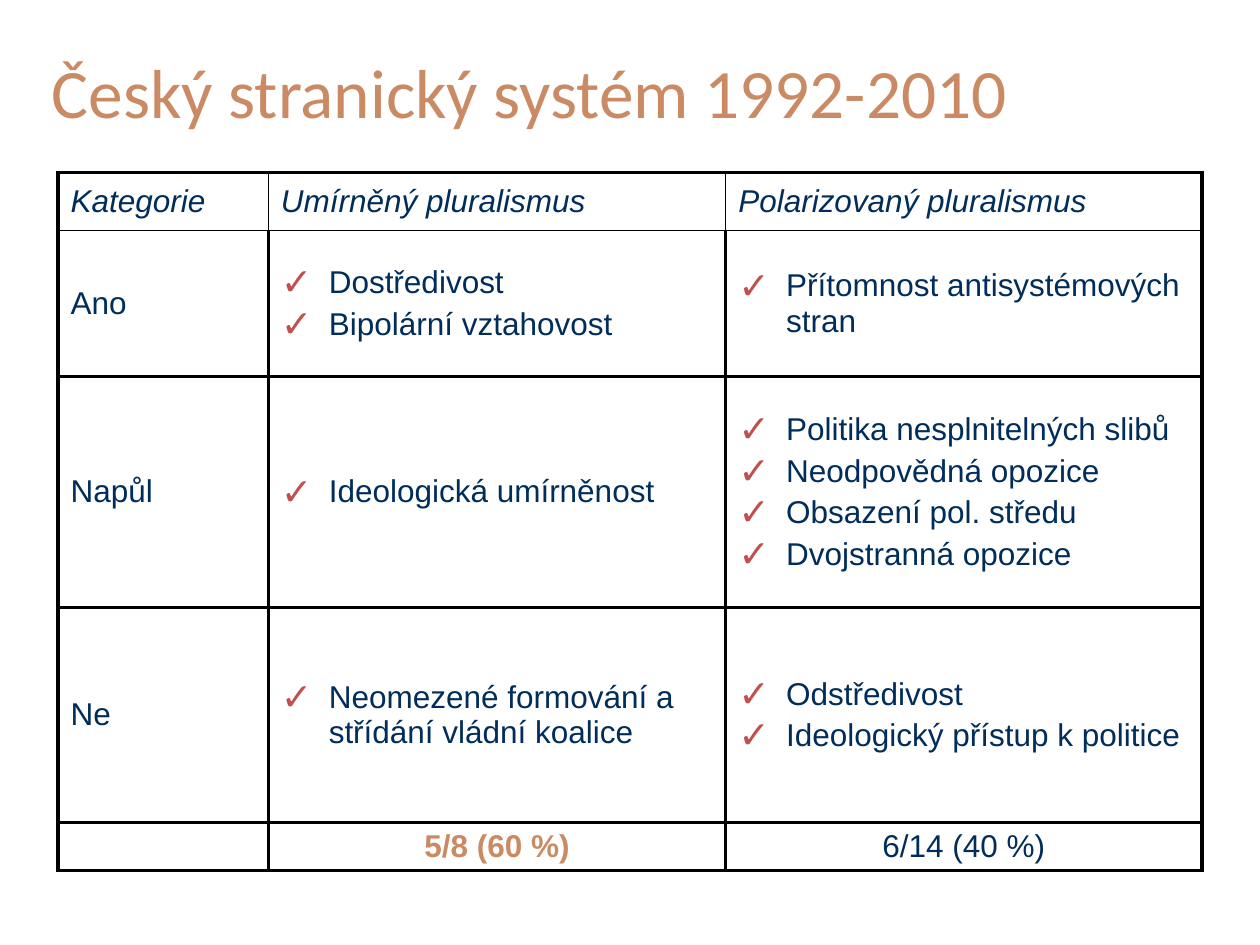
from lxml import etree
from pptx import Presentation
from pptx.dml.color import RGBColor
from pptx.enum.text import MSO_ANCHOR, MSO_AUTO_SIZE, PP_ALIGN
from pptx.oxml.ns import qn
from pptx.util import Inches, Pt

MIDDLE = MSO_ANCHOR.MIDDLE
LEFT, CENTER = PP_ALIGN.LEFT, PP_ALIGN.CENTER
NO_AUTOFIT = MSO_AUTO_SIZE.NONE

COLORS = {"accent": "CA8A64", "text": "002D5A", "check": "C0504D", "border": "000000"}
THIN, THICK = 1, 2.25
COL_WIDTHS = [1.67, 3.63, 3.78]
ROW_HEIGHTS = [0.46, 1.16, 1.83, 1.71, 0.38]
ROWS = [
    [["Kategorie"], ["Umírněný pluralismus"], ["Polarizovaný pluralismus"]],
    [["Ano"], ["Dostředivost", "Bipolární vztahovost"],
     ["Přítomnost antisystémových stran"]],
    [["Napůl"], ["Ideologická umírněnost"],
     ["Politika nesplnitelných slibů", "Neodpovědná opozice",
      "Obsazení pol. středu", "Dvojstranná opozice"]],
    [["Ne"], ["Neomezené formování a střídání vládní koalice"],
     ["Odstředivost", "Ideologický přístup k politice"]],
    [[], ["5/8 (60 %)"], ["6/14 (40 %)"]],
]
LAST_ROW, LAST_COL = len(ROWS) - 1, len(COL_WIDTHS) - 1


def add_border(cell, side, width):
    ln = etree.SubElement(cell._tc.get_or_add_tcPr(), qn(f"a:ln{side}"), w=str(Pt(width)))
    fill = etree.SubElement(ln, qn("a:solidFill"))
    etree.SubElement(fill, qn("a:srgbClr"), val=COLORS["border"])


def add_check_bullet(p):
    pPr = p._p.get_or_add_pPr()
    pPr.set("marL", str(Inches(0.38)))
    pPr.set("indent", str(Inches(-0.38)))
    color = etree.SubElement(pPr, qn("a:buClr"))
    etree.SubElement(color, qn("a:srgbClr"), val=COLORS["check"])
    etree.SubElement(pPr, qn("a:buSzPct"), val="120000")
    etree.SubElement(pPr, qn("a:buFont"), typeface="Arial")
    etree.SubElement(pPr, qn("a:buChar"), char="✓")


prs = Presentation()
prs.slide_width, prs.slide_height = Inches(10), Inches(7.5)
s = prs.slides.add_slide(prs.slide_layouts[5])

title = s.shapes.title
title.left, title.top = Inches(0.31), Inches(0.5)
title.width, title.height = Inches(9.24), Inches(0.44)
tf = title.text_frame
tf.text = "Český stranický systém 1992-2010"
tf.word_wrap = True
tf.auto_size = NO_AUTOFIT
tf.vertical_anchor = MIDDLE
p = tf.paragraphs[0]
p.alignment = LEFT
font = p.runs[0].font
font.name, font.size = "Calibri", Pt(39.6)
font.color.rgb = RGBColor.from_string(COLORS["accent"])

table = s.shapes.add_table(
    len(ROWS), len(COL_WIDTHS), Inches(0.46), Inches(1.37),
    Inches(sum(COL_WIDTHS)), Inches(sum(ROW_HEIGHTS))).table
table.first_row = table.horz_banding = False
for column, width in zip(table.columns, COL_WIDTHS):
    column.width = Inches(width)
for row, height in zip(table.rows, ROW_HEIGHTS):
    row.height = Inches(height)

for i, row in enumerate(ROWS):
    for j, lines in enumerate(row):
        cell = table.cell(i, j)
        cell.vertical_anchor = MIDDLE
        add_border(cell, "L", THIN if i == 0 and j > 0 else THICK)
        add_border(cell, "R", THIN if i == 0 and j < LAST_COL else THICK)
        add_border(cell, "T", THIN if i == 1 else THICK)
        add_border(cell, "B", THIN if i == 0 else THICK)
        cell.fill.background()
        if not lines:
            cell.margin_top = cell.margin_bottom = 0
            continue

        cell.text_frame.text = "\n".join(lines)
        for k, p in enumerate(cell.text_frame.paragraphs):
            if j > 0 and 0 < i < LAST_ROW:
                add_check_bullet(p)
            p.alignment = CENTER if i == LAST_ROW else LEFT
            if k > 0:
                p.space_before = Pt(3.6)
            is_result = i == LAST_ROW and j == 1
            font = p.runs[0].font
            font.name, font.size = "Arial", Pt(18)
            font.italic = i == 0
            font.bold = is_result
            font.color.rgb = RGBColor.from_string(COLORS["accent" if is_result else "text"])

prs.save("out.pptx")
